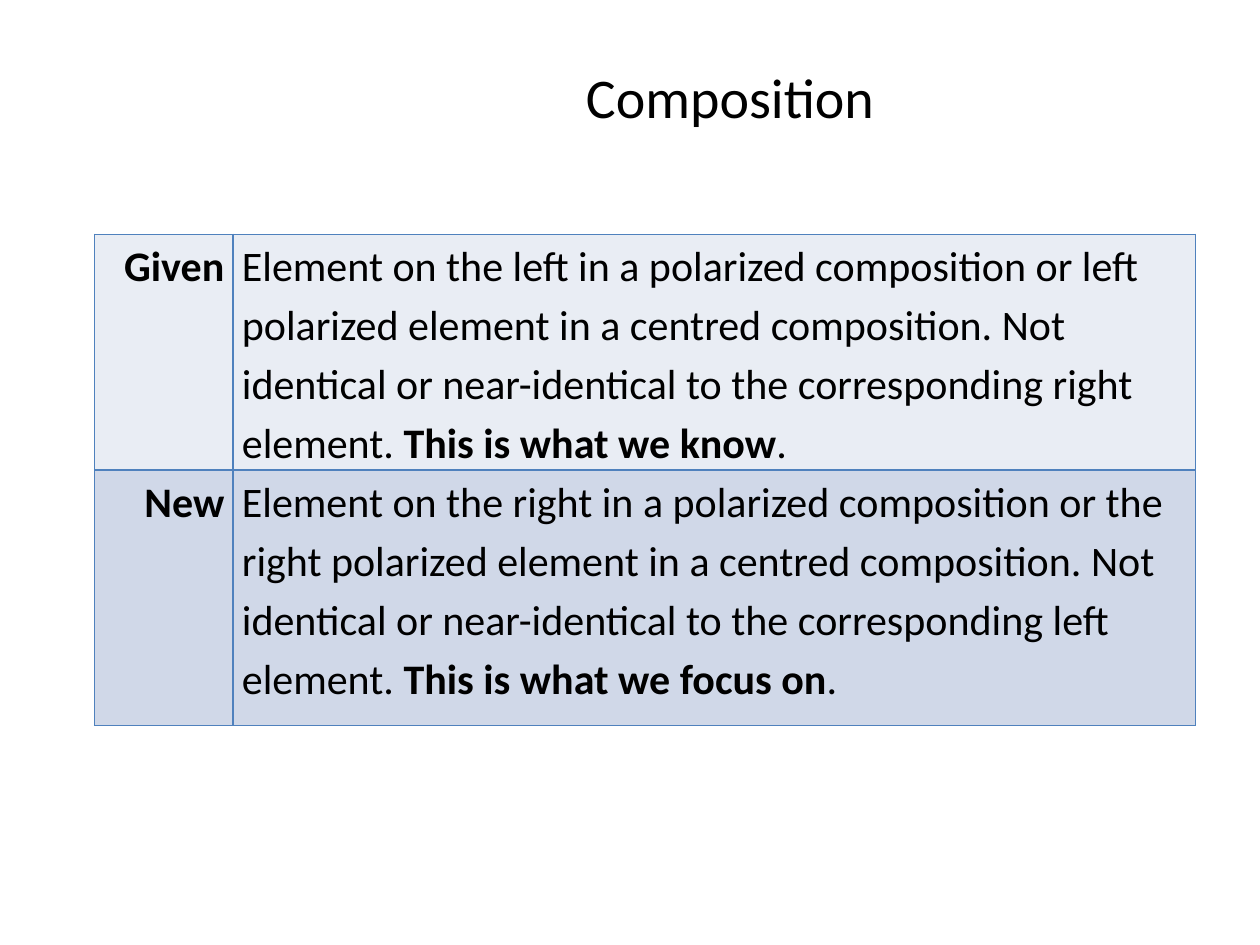
from lxml import etree
from pptx import Presentation
from pptx import util as u
from pptx.dml.color import RGBColor
from pptx.enum import text
from pptx.oxml import ns

COLORS = {"text": "000000", "border": "4F81BD", "given": "E9EDF4", "new": "D0D8E8"}
ROWS = [
    ("Given", "given", 1.52,
     "Element on the left in a polarized composition or left polarized element in a "
     "centred composition. Not identical or near-identical to the corresponding right element. ",
     "This is what we know"),
    ("New", "new", 2.03,
     "Element on the right in a polarized composition or the right polarized element in a "
     "centred composition. Not identical or near-identical to the corresponding left element. ",
     "This is what we focus on"),
]


def add_span(para, words, size=24, bold=False):
    """Add formatted words to a paragraph."""
    span = para.add_run()
    span.text = words
    span.font.name = "Calibri"
    span.font.size = u.Pt(size)
    span.font.bold = bold
    span.font.color.rgb = RGBColor.from_string(COLORS["text"])


class SlideBuilder:
    """Hold the table style and the current slide."""

    columns = (1.1, 7.64)
    border_width = 1

    def __init__(self, deck):
        """Add a title-only slide to the deck."""
        self.page = deck.slides.add_slide(deck.slide_layouts[5])

    def title(self, words, left, top, width, height):
        """Place and format the title."""
        box = self.page.shapes.title
        box.left, box.top = u.Inches(left), u.Inches(top)
        box.width, box.height = u.Inches(width), u.Inches(height)
        box.text_frame.vertical_anchor = text.MSO_ANCHOR.MIDDLE
        para = box.text_frame.paragraphs[0]
        para.alignment = text.PP_ALIGN.CENTER
        add_span(para, words, size=32)

    def table(self, rows, left, top):
        """Add the table of terms and definitions."""
        width, height = sum(self.columns), sum(row[2] for row in rows)
        table = self.page.shapes.add_table(
            len(rows), len(self.columns), u.Inches(left), u.Inches(top),
            u.Inches(width), u.Inches(height)).table
        table.first_row = table.horz_banding = False
        for column, column_width in zip(table.columns, self.columns):
            column.width = u.Inches(column_width)
        for index, (term, fill, row_height, definition, summary) in enumerate(rows):
            table.rows[index].height = u.Inches(row_height)
            self.cell(table.cell(index, 0), fill, [(term, True)], text.PP_ALIGN.RIGHT)
            self.cell(table.cell(index, 1), fill,
                      [(definition, False), (summary, True), (".", False)],
                      text.PP_ALIGN.LEFT)

    def cell(self, cell, fill, spans, alignment):
        """Fill, border and write one cell."""
        cell.margin_left = cell.margin_right = u.Inches(0.07)
        cell.margin_top = cell.margin_bottom = 0
        self.borders(cell)
        cell.fill.solid()
        cell.fill.fore_color.rgb = RGBColor.from_string(COLORS[fill])
        para = cell.text_frame.paragraphs[0]
        para.alignment = alignment
        para.line_spacing = 1.15
        for words, bold in spans:
            add_span(para, words, bold=bold)

    def borders(self, cell):
        """Draw the four borders of a cell."""
        properties = cell._tc.get_or_add_tcPr()
        for side in ("a:lnL", "a:lnR", "a:lnT", "a:lnB"):
            line = etree.SubElement(properties, ns.qn(side), w=str(u.Pt(self.border_width)))
            paint = etree.SubElement(line, ns.qn("a:solidFill"))
            etree.SubElement(paint, ns.qn("a:srgbClr"), val=COLORS["border"])


def main():
    """Build and save the deck."""
    deck = Presentation()
    deck.slide_width, deck.slide_height = u.Inches(10), u.Inches(7.5)
    slide = SlideBuilder(deck)
    slide.title("Composition", 2.09, 0.3, 7.41, 0.93)
    slide.table(ROWS, 0.75, 1.86)
    deck.save("out.pptx")


if __name__ == "__main__":
    main()
